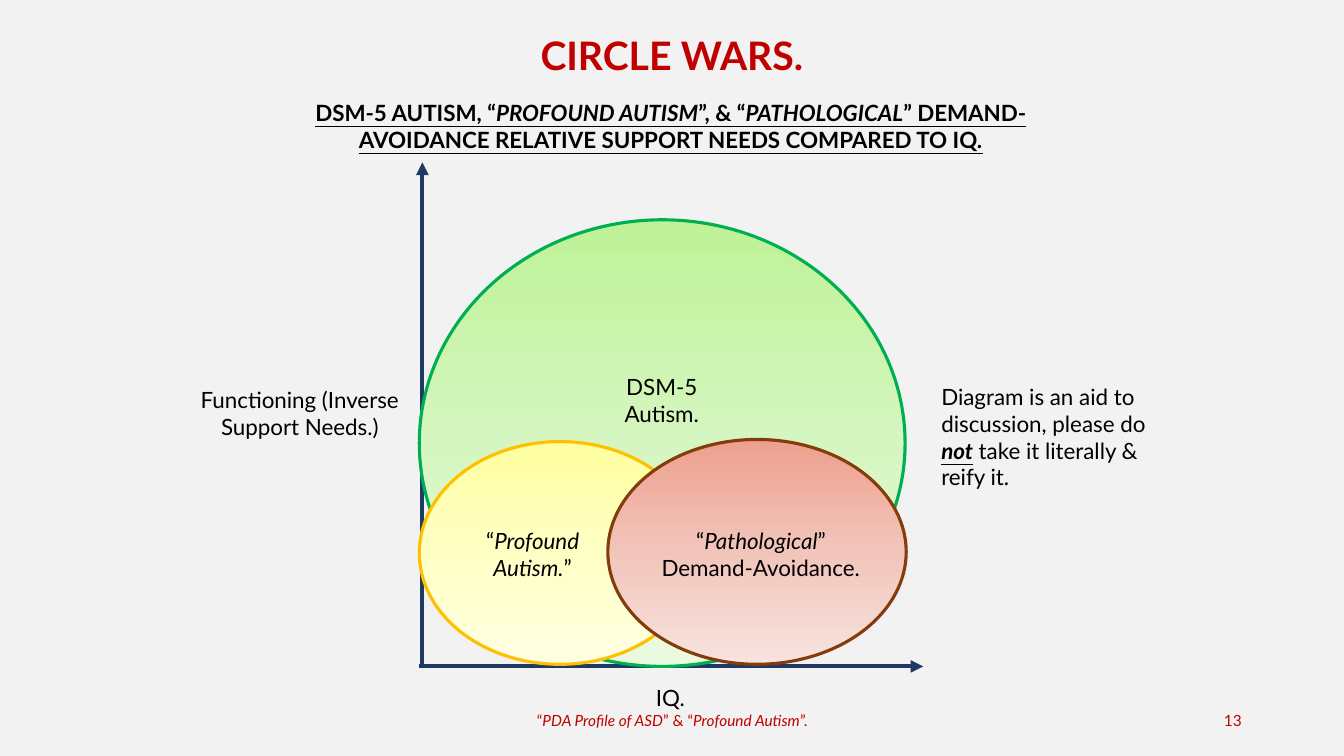
from copy import deepcopy

from lxml import etree
from pptx import Presentation
from pptx.dml.color import RGBColor
from pptx.enum.shapes import MSO_CONNECTOR, MSO_SHAPE
from pptx.enum.text import MSO_ANCHOR, PP_ALIGN
from pptx.oxml.ns import qn
from pptx.util import Pt

STRAIGHT = MSO_CONNECTOR.STRAIGHT
OVAL = MSO_SHAPE.OVAL
TOP, MIDDLE = MSO_ANCHOR.TOP, MSO_ANCHOR.MIDDLE
LEFT, CENTER, RIGHT = PP_ALIGN.LEFT, PP_ALIGN.CENTER, PP_ALIGN.RIGHT

BACKGROUND = RGBColor(0xF2, 0xF2, 0xF2)
BLACK = RGBColor(0, 0, 0)
RED = RGBColor(0xC0, 0, 0)
NAVY = RGBColor(0x20, 0x38, 0x64)
GREEN = RGBColor(0, 0xB0, 0x50)
AMBER = RGBColor(0xFF, 0xC0, 0)
BROWN = RGBColor(0x84, 0x3C, 0x0B)
GREEN_FADE = [RGBColor(0xBE, 0xF2, 0x97), RGBColor(0xD5, 0xF6, 0xC0), RGBColor(0xEA, 0xFA, 0xE0)]
YELLOW_FADE = [RGBColor(0xFF, 0xFF, 0xA0), RGBColor(0xFF, 0xFF, 0xC5), RGBColor(0xFF, 0xFF, 0xE3)]
RED_FADE = [RGBColor(0xED, 0xA0, 0x8E), RGBColor(0xF2, 0xC5, 0xBB), RGBColor(0xF8, 0xE3, 0xDE)]

prs = Presentation()
prs.slide_width, prs.slide_height = Pt(960), Pt(540)
slide = prs.slides.add_slide(prs.slide_layouts[6])
slide.background.fill.solid()
slide.background.fill.fore_color.rgb = BACKGROUND


def add_text(text, box, size=16, color=BLACK, align=CENTER, anchor=TOP,
             bold=False, underline=False, strong_emphasis=False):
    frame = slide.shapes.add_textbox(*map(Pt, box)).text_frame
    frame.word_wrap = True
    frame.vertical_anchor = anchor
    paragraph = frame.paragraphs[0]
    paragraph.alignment = align
    for index, part in enumerate(text.split("*")):
        emphasized = index % 2 == 1
        run = paragraph.add_run()
        run.text = part
        font = run.font
        font.name, font.size, font.color.rgb = "Lato", Pt(size), color
        font.italic = emphasized
        font.bold = bold or (emphasized and strong_emphasis)
        font.underline = underline or (emphasized and strong_emphasis)


add_text("“*PDA Profile of ASD*” & “*Profound Autism*”.", (318.2, 500.4, 324, 28.8),
         size=11, color=RED, anchor=MIDDLE)
add_text("13", (678.2, 500.4, 216, 28.8), size=11, color=RED, align=RIGHT, anchor=MIDDLE)
add_text("CIRCLE WARS.", (49, 18.7, 861.8, 41), size=28, color=RED, bold=True)
add_text("DSM-5 AUTISM, “*PROFOUND AUTISM*”, & “*PATHOLOGICAL*” DEMAND-AVOIDANCE "
         "RELATIVE SUPPORT NEEDS COMPARED TO IQ.", (176.4, 67, 605.5, 46),
         bold=True, underline=True)

axes = [(301.7, 476, 301.7, 116), (299.5, 476, 659.5, 476)]
for ends in axes:
    axis = slide.shapes.add_connector(STRAIGHT, *map(Pt, ends))
    axis.line.color.rgb = NAVY
    axis.line.width = Pt(3)
    etree.SubElement(axis.line._get_or_add_ln(), qn("a:tailEnd"), type="triangle")
    etree.SubElement(axis._element.spPr, qn("a:effectLst"))

circles = [
    ((299.5, 157, 347, 319), GREEN_FADE, GREEN),
    ((299.5, 315.4, 200.9, 159.1), YELLOW_FADE, AMBER),
    ((434.2, 313.9, 213.1, 160.6), RED_FADE, BROWN),
]
for box, fade, outline in circles:
    circle = slide.shapes.add_shape(OVAL, *map(Pt, box))
    circle.shadow.inherit = False
    circle.line.color.rgb = outline
    circle.line.width = Pt(2.25)
    fill = circle.fill
    fill.gradient()
    fill.gradient_angle = 270
    first_stop = fill.gradient_stops[0]._gs
    first_stop.addnext(deepcopy(first_stop))
    for stop, position, color in zip(fill.gradient_stops, (0, 0.5, 1), fade):
        stop.position = position
        stop.color.rgb = color

add_text("DSM-5 Autism.", (413.3, 262.8, 118.8, 26.6))
add_text("“*Profound Autism.*”", (336.2, 373, 88.6, 46))
add_text("“*Pathological*” Demand-Avoidance.", (462.2, 373, 162.7, 46))
add_text("IQ.", (461.5, 485.3, 36, 26.6), align=LEFT)
add_text("Functioning (Inverse Support Needs.)", (132.5, 272.2, 163.4, 46))
add_text("Diagram is an aid to discussion, please do *not* take it literally & reify it.",
         (665.3, 270, 162.7, 85), align=LEFT, strong_emphasis=True)

prs.save("out.pptx")
